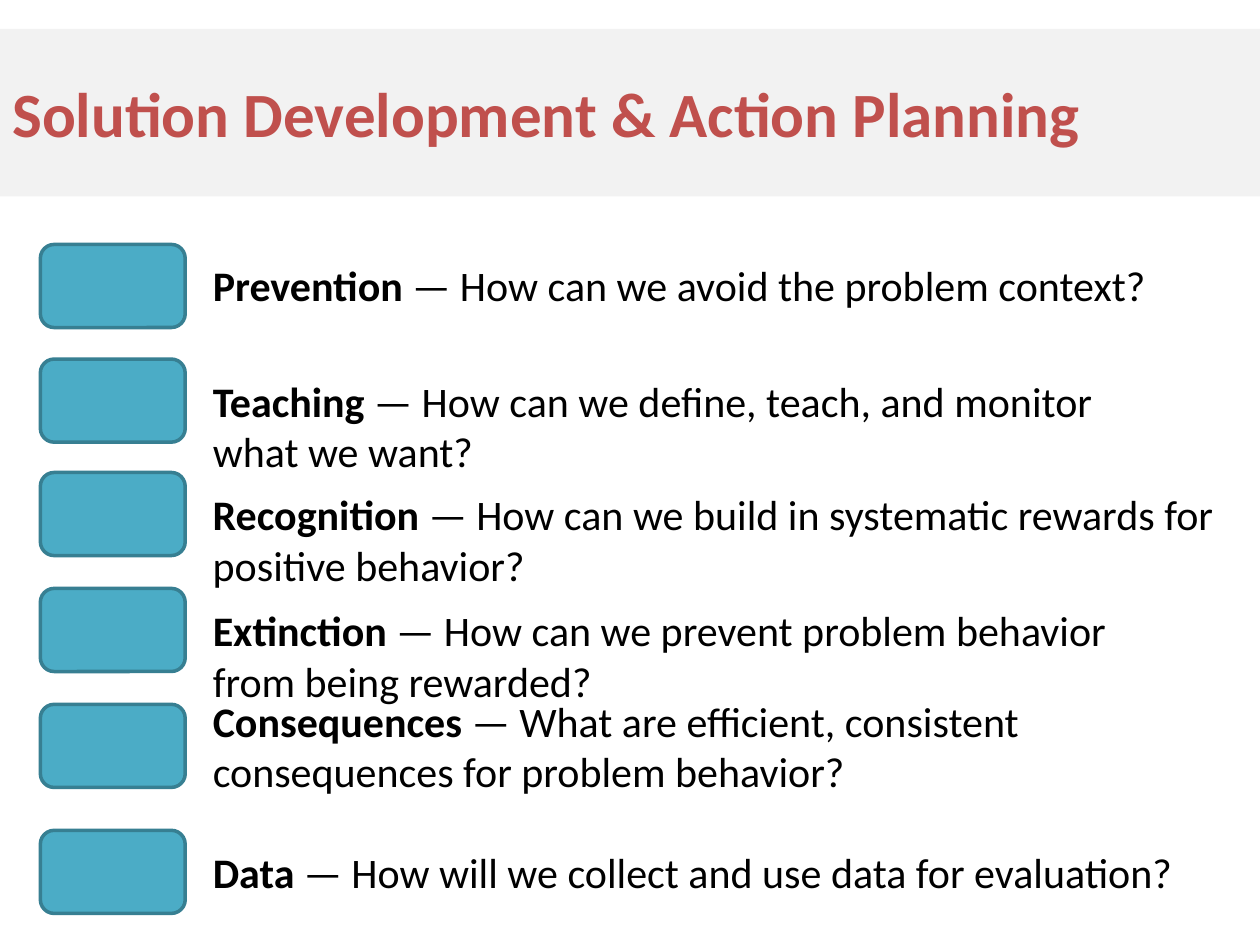
from pptx import Presentation
from pptx.dml.color import RGBColor
from pptx.enum.shapes import MSO_SHAPE as SHAPE
from pptx.enum.text import MSO_ANCHOR as ANCHOR, PP_ALIGN as ALIGN
from pptx.util import Inches, Pt

BLACK = RGBColor(0x00, 0x00, 0x00)
GRAY = RGBColor(0xF2, 0xF2, 0xF2)
RED = RGBColor(0xC0, 0x50, 0x4D)
TEAL = RGBColor(0x4B, 0xAC, 0xC6)
DARK_TEAL = RGBColor(0x37, 0x7F, 0x92)

STEPS = [
    ("Prevention", "How can we avoid the problem context?", 1.94, 2.01, 7.89, 0.51),
    ("Teaching", "How can we define, teach, and monitor what we want?", 2.85, 2.93, 7.89, 0.91),
    ("Recognition", "How can we build in systematic rewards for positive behavior?",
     3.75, 3.83, 8.34, 0.91),
    ("Extinction", "How can we prevent problem behavior from being rewarded?",
     4.67, 4.75, 7.89, 0.91),
    ("Consequences", "What are efficient, consistent consequences for problem behavior?",
     5.59, 5.47, 7.89, 0.91),
    ("Data", "How will we collect and use data for evaluation?", 6.59, 6.67, 7.89, 0.51),
]


def add_run(p, text, size=24, color=BLACK, bold=False):
    r = p.add_run()
    r.text = text
    r.font.name = "Calibri"
    r.font.size = Pt(size)
    r.font.bold = bold
    r.font.color.rgb = color


def add_box(kind, x, y, w, h, fill):
    s = slide.shapes.add_shape(kind, Inches(x), Inches(y), Inches(w), Inches(h))
    s.shadow.inherit = False
    s.fill.solid()
    s.fill.fore_color.rgb = fill
    return s


prs = Presentation()
prs.slide_width = Inches(10)
prs.slide_height = Inches(7.5)
slide = prs.slides.add_slide(prs.slide_layouts[6])

s = add_box(SHAPE.RECTANGLE, 0, 0.23, 10, 1.33, GRAY)
s.line.fill.background()
tf = s.text_frame
tf.word_wrap = True
tf.vertical_anchor = ANCHOR.MIDDLE
p = tf.paragraphs[0]
p.alignment = ALIGN.LEFT
add_run(p, "Solution Development & Action Planning", size=36, color=RED, bold=True)

for name, question, box_y, text_y, w, h in STEPS:
    s = add_box(SHAPE.ROUNDED_RECTANGLE, 0.32, box_y, 1.15, 0.66, TEAL)
    s.line.color.rgb = DARK_TEAL
    s.line.width = Pt(2)
    tf = slide.shapes.add_textbox(Inches(1.59), Inches(text_y), Inches(w), Inches(h)).text_frame
    tf.word_wrap = True
    p = tf.paragraphs[0]
    add_run(p, f"{name} ", bold=True)
    add_run(p, f"— {question}")

prs.save("out.pptx")
